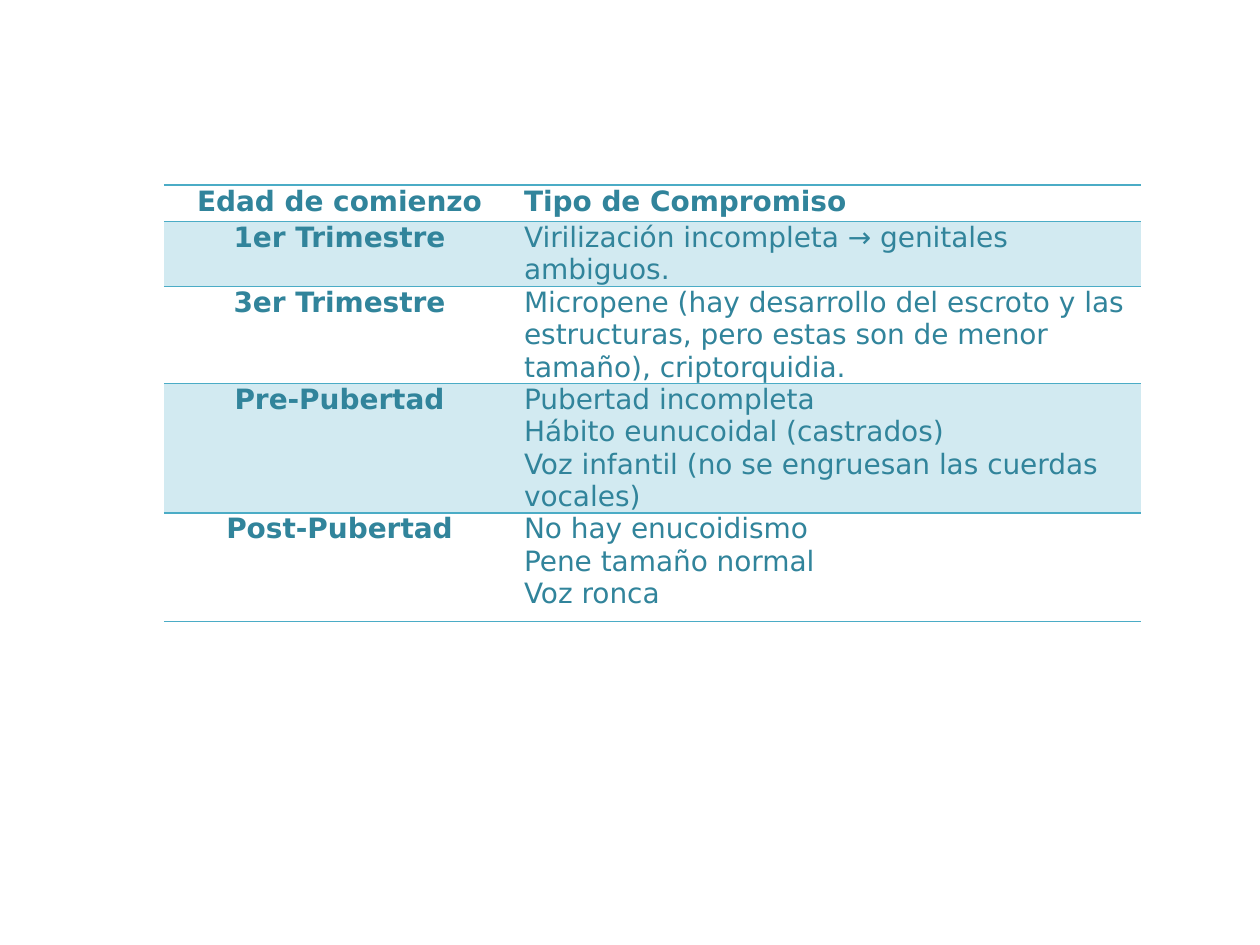
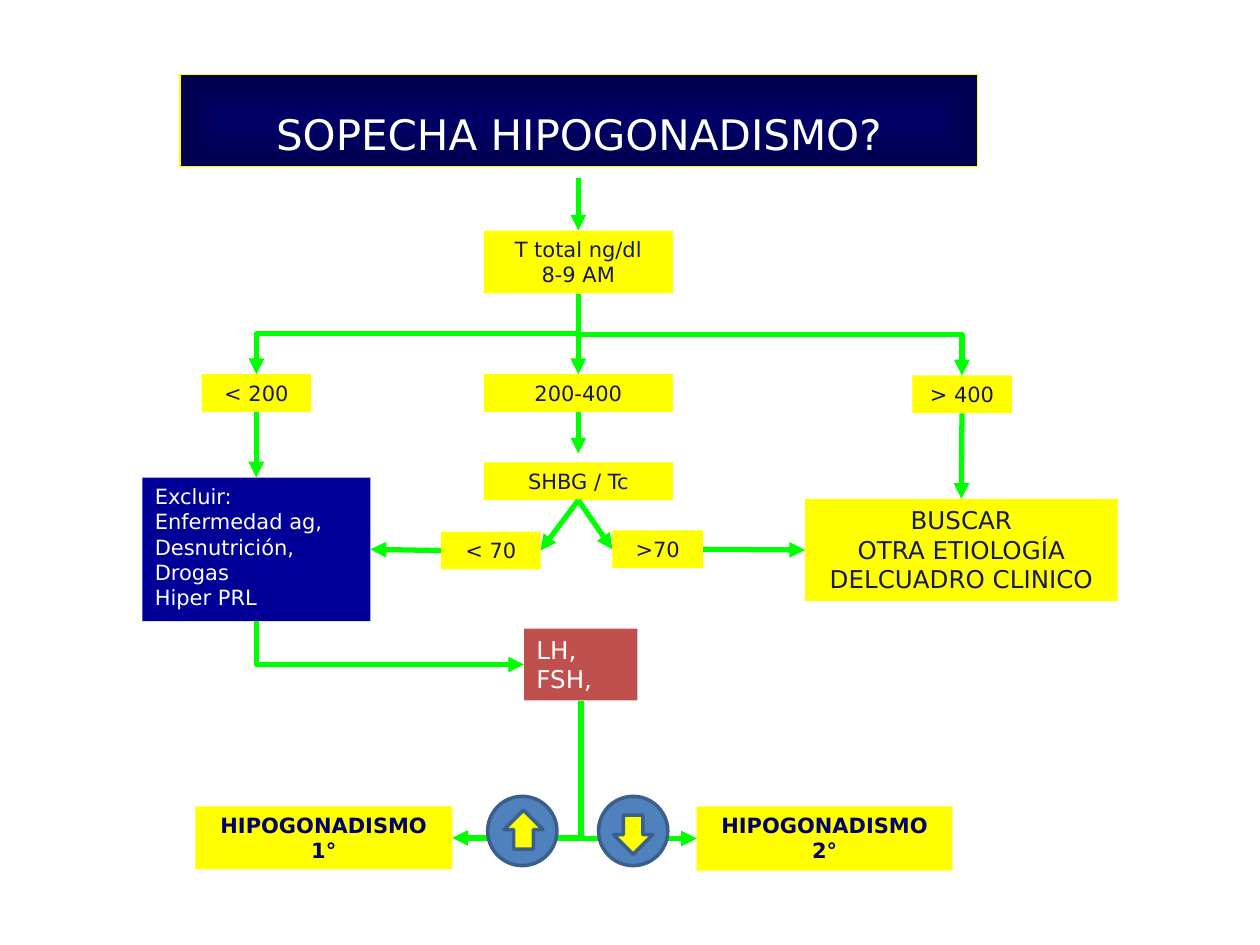
import pptx
import pptx.util
import pptx.dml.color
import pptx.enum.dml
import pptx.enum.shapes
import pptx.enum.text
import pptx.oxml.ns
import lxml.etree

Inches, Pt = pptx.util.Inches, pptx.util.Pt
RGBColor = pptx.dml.color.RGBColor
SHAPE = pptx.enum.shapes.MSO_SHAPE
CONNECTOR = pptx.enum.shapes.MSO_CONNECTOR
ALIGN = pptx.enum.text.PP_ALIGN
qn = pptx.oxml.ns.qn

# Colours and font
TEAL_TEXT = RGBColor(0x31, 0x84, 0x9B)
TEAL_RULE = RGBColor(0x4B, 0xAC, 0xC6)
TEAL_BAND = RGBColor(0xD2, 0xEA, 0xF1)
WHITE = RGBColor(0xFF, 0xFF, 0xFF)
YELLOW = RGBColor(0xFF, 0xFF, 0x00)
GREEN = RGBColor(0x00, 0xFF, 0x00)
NAVY = RGBColor(0x00, 0x00, 0x66)
DARK_NAVY = RGBColor(0x00, 0x00, 0x4E)
ROYAL = RGBColor(0x00, 0x00, 0x99)
INK = RGBColor(0x18, 0x18, 0x56)
RED = RGBColor(0xC0, 0x50, 0x4D)
BLUE = RGBColor(0x4F, 0x81, 0xBD)
BLUE_EDGE = RGBColor(0x3A, 0x5F, 0x8C)
FONT = "DejaVu Sans"

# Slide 1: table content, each row as age and list of effects
TABLE_AT = (1.3, 1.47, 7.76, 2.88)
COLUMN_WIDTHS = [2.79, 4.97]
ROW_HEIGHTS = [0.29, 0.29, 0.58, 0.86, 0.86]
ONSET_ROWS = [
    ("Edad de comienzo", ["Tipo de Compromiso"]),
    ("1er Trimestre", ["Virilización incompleta → genitales ambiguos."]),
    ("3er Trimestre", ["Micropene (hay desarrollo del escroto y las estructuras, "
                       "pero estas son de menor tamaño), criptorquidia."]),
    ("Pre-Pubertad", ["Pubertad incompleta", "Hábito eunucoidal (castrados)",
                      "Voz infantil (no se engruesan las cuerdas vocales)"]),
    ("Post-Pubertad", ["No hay enucoidismo", "Pene tamaño normal", "Voz ronca"]),
]

# Slide 2: box styles, then boxes as name: (place, style, lines)
STEP = {"fill": YELLOW, "color": INK, "size": 12, "align": ALIGN.CENTER}
STYLES = {
    "title": {**STEP, "fill": NAVY, "color": WHITE, "size": 24},
    "step": STEP,
    "outcome": {**STEP, "size": 14},
    "diagnosis": {**STEP, "color": NAVY, "bold": True},
    "exclude": {"fill": ROYAL, "color": WHITE, "size": 12, "align": ALIGN.LEFT},
    "hormones": {"fill": RED, "color": WHITE, "size": 14, "align": ALIGN.LEFT},
}
BOXES = {
    "title": ((1.43, 0.59, 6.33, 0.73), "title", ["SOPECHA HIPOGONADISMO?"]),
    "total": ((3.84, 1.83, 1.5, 0.5), "step", ["T total ng/dl", "8-9 AM"]),
    "low": ((1.6, 2.97, 0.87, 0.3), "step", ["< 200"]),
    "middle": ((3.84, 2.97, 1.5, 0.3), "step", ["200-400"]),
    "high": ((7.24, 2.98, 0.79, 0.3), "step", ["> 400"]),
    "shbg": ((3.84, 3.67, 1.5, 0.3), "step", ["SHBG / Tc"]),
    "under70": ((3.5, 4.22, 0.79, 0.3), "step", ["< 70"]),
    "over70": ((4.86, 4.21, 0.72, 0.3), "step", [">70"]),
    "exclude": ((1.13, 3.79, 1.81, 1.14), "exclude",
                ["Excluir: Enfermedad ag, Desnutrición, Drogas", "Hiper PRL"]),
    "search": ((6.39, 3.96, 2.48, 0.81), "outcome",
               ["BUSCAR", "OTRA ETIOLOGÍA", "DELCUADRO CLINICO"]),
    "hormones": ((4.16, 4.99, 0.9, 0.57), "hormones", ["LH, FSH,"]),
    "primary": ((1.55, 6.4, 2.04, 0.5), "diagnosis", ["HIPOGONADISMO 1°"]),
    "secondary": ((5.53, 6.4, 2.03, 0.51), "diagnosis", ["HIPOGONADISMO 2°"]),
}

# Ends are (box name, side) or a free point in inches
TOP, LEFT, BOTTOM, RIGHT = range(4)
STRAIGHT_ARROWS = [
    ((4.59, 1.41), ("total", TOP)),
    (("total", BOTTOM), ("middle", TOP)),
    (("middle", BOTTOM), (4.59, 3.6)),
    (("low", BOTTOM), ("exclude", TOP)),
    (("high", BOTTOM), ("search", TOP)),
    (("shbg", BOTTOM), ("under70", RIGHT)),
    (("shbg", BOTTOM), ("over70", LEFT)),
    (("under70", LEFT), ("exclude", RIGHT)),
    (("over70", RIGHT), ("search", LEFT)),
]
ELBOW_ARROWS = [
    (("total", BOTTOM), ("low", TOP), "bentConnector3"),
    (("total", BOTTOM), ("high", TOP), "bentConnector3"),
    (("exclude", BOTTOM), ("hormones", LEFT), "bentConnector2"),
    (("hormones", BOTTOM), ("primary", RIGHT), "bentConnector2"),
    (("hormones", BOTTOM), ("secondary", LEFT), "bentConnector2"),
]

# Level badges: circle left, arrow left, arrow top, arrow shape
BADGE_TOP, BADGE_SIZE, ARROW_SIZE = 6.32, 0.55, 0.31
BADGES = [(4.75, 4.87, 6.47, SHAPE.DOWN_ARROW), (3.87, 4.0, 6.43, SHAPE.UP_ARROW)]


def assign(target, values):
    for name, value in values.items():
        setattr(target, name, value)


def write(frame, lines, size, color, align, bold=False):
    for index, line in enumerate(lines):
        para = frame.add_paragraph() if index else frame.paragraphs[0]
        para.alignment = align
        span = para.add_run()
        span.text = line
        assign(span.font, {"name": FONT, "size": Pt(size), "bold": bold})
        span.font.color.rgb = color


def add_shape(shapes, kind, place, fill, edge=None, width=0):
    shape = shapes.add_shape(kind, *map(Inches, place))
    shape.shadow.inherit = False
    shape.fill.solid()
    shape.fill.fore_color.rgb = fill
    if edge is None:
        shape.line.fill.background()
    else:
        shape.line.color.rgb = edge
        shape.line.width = Pt(width)
    return shape


# Table
def rule_cell(cell):
    props = cell._tc.get_or_add_tcPr()
    for side in ("lnL", "lnR", "lnT", "lnB"):
        rule = lxml.etree.SubElement(props, qn("a:" + side), w=str(Pt(1)))
        if side in ("lnL", "lnR"):
            lxml.etree.SubElement(rule, qn("a:noFill"))
        else:
            paint = lxml.etree.SubElement(rule, qn("a:solidFill"))
            lxml.etree.SubElement(paint, qn("a:srgbClr"), val=str(TEAL_RULE))


def build_table(page):
    table = page.shapes.add_table(len(ONSET_ROWS), 2, *map(Inches, TABLE_AT)).table
    assign(table, {"first_row": False, "horz_banding": False})
    for column, width in zip(table.columns, COLUMN_WIDTHS):
        column.width = Inches(width)
    for index, (age, effects) in enumerate(ONSET_ROWS):
        table.rows[index].height = Inches(ROW_HEIGHTS[index])
        contents = [([age], ALIGN.CENTER, True), (effects, ALIGN.LEFT, index == 0)]
        for number, (lines, align, bold) in enumerate(contents):
            cell = table.cell(index, number)
            assign(cell, {"margin_left": Inches(0.07), "margin_right": Inches(0.07),
                          "margin_top": 0, "margin_bottom": 0})
            rule_cell(cell)
            if index % 2:
                cell.fill.solid()
                cell.fill.fore_color.rgb = TEAL_BAND
            else:
                cell.fill.background()
            write(cell.text_frame, lines, 16, TEAL_TEXT, align, bold)


# Flow chart boxes
def add_box(page, place, style, lines):
    look = dict(STYLES[style])
    box = add_shape(page.shapes, SHAPE.RECTANGLE, place, look.pop("fill"))
    assign(box.text_frame, {
        "word_wrap": True,
        "vertical_anchor": pptx.enum.text.MSO_ANCHOR.TOP,
        "auto_size": pptx.enum.text.MSO_AUTO_SIZE.SHAPE_TO_FIT_TEXT,
    })
    write(box.text_frame, lines, **look)
    return box


def finish_title(box):
    box.text_frame.paragraphs[0].line_spacing = 1.55
    box.line.color.rgb = YELLOW
    box.line.width = Pt(0.75)
    box.fill.gradient()
    for stop, color in zip(box.fill.gradient_stops, (NAVY, DARK_NAVY)):
        stop.color.rgb = color
    gradient = box.element.spPr.find(qn("a:gradFill"))
    gradient.remove(gradient.find(qn("a:lin")))
    shade = lxml.etree.SubElement(gradient, qn("a:path"), {"path": "shape"})
    lxml.etree.SubElement(shade, qn("a:fillToRect"),
                          {side: "50000" for side in "ltrb"})


# Arrows
def locate(end):
    if end[0] not in BOXES:
        return end
    left, top, width, height = BOXES[end[0]][0]
    return [(left + width / 2, top), (left, top + height / 2),
            (left + width / 2, top + height), (left + width, top + height / 2)][end[1]]


def add_arrow(page, kind, start, end):
    arrow = page.shapes.add_connector(kind, *map(Inches, (*locate(start), *locate(end))))
    arrow.line.color.rgb = GREEN
    arrow.line.width = Pt(3)
    lxml.etree.SubElement(arrow.line._get_or_add_ln(), qn("a:tailEnd"), type="triangle")
    lxml.etree.SubElement(arrow.element.spPr, qn("a:effectLst"))
    return arrow


def add_straight(page, boxes, start, end):
    arrow = add_arrow(page, CONNECTOR.STRAIGHT, start, end)
    if start[0] in boxes:
        arrow.begin_connect(boxes[start[0]], start[1])
    if end[0] in boxes:
        arrow.end_connect(boxes[end[0]], end[1])


def add_elbow(page, start, end, preset):
    """Leave downwards: the frame is turned a quarter about its centre."""
    arrow = add_arrow(page, CONNECTOR.ELBOW, start, end)
    (x1, y1), (x2, y2) = locate(start), locate(end)
    length, spread = y2 - y1, abs(x2 - x1)
    assign(arrow, {"left": Inches((x1 + x2 - length) / 2),
                   "top": Inches((y1 + y2 - spread) / 2),
                   "width": Inches(length), "height": Inches(spread)})
    frame = arrow.element.spPr.find(qn("a:xfrm"))
    frame.attrib.pop("flipH", None)
    if x2 > x1:
        frame.set("flipH", "1")
    frame.set("rot", str((270 if x2 > x1 else 90) * 60000))
    arrow.element.spPr.find(qn("a:prstGeom")).set("prst", preset)


def build_flow(page):
    boxes = {name: add_box(page, *box) for name, box in BOXES.items()}
    finish_title(boxes["title"])
    for start, end in STRAIGHT_ARROWS:
        add_straight(page, boxes, start, end)
    for elbow in ELBOW_ARROWS:
        add_elbow(page, *elbow)
    for circle_left, arrow_left, arrow_top, kind in BADGES:
        badge = page.shapes.add_group_shape().shapes
        add_shape(badge, SHAPE.OVAL, (circle_left, BADGE_TOP, BADGE_SIZE, BADGE_SIZE),
                  BLUE, BLUE_EDGE, 2)
        add_shape(badge, kind, (arrow_left, arrow_top, ARROW_SIZE, ARROW_SIZE),
                  YELLOW, BLUE_EDGE, 2)


def main():
    deck = pptx.Presentation()
    assign(deck, {"slide_width": Inches(10), "slide_height": Inches(7.5)})
    for build in (build_table, build_flow):
        build(deck.slides.add_slide(deck.slide_layouts[6]))
    deck.save("out.pptx")


if __name__ == "__main__":
    main()
